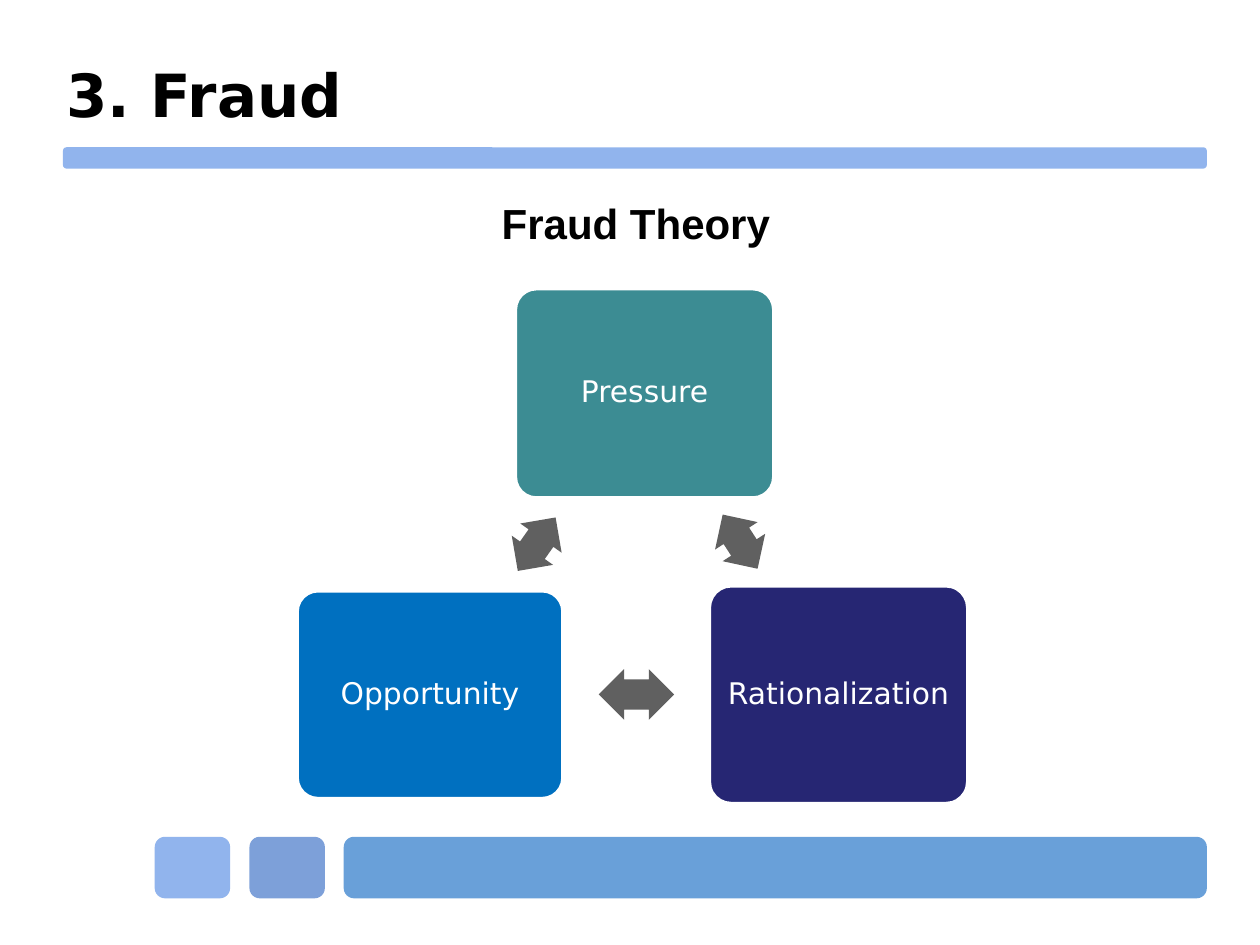
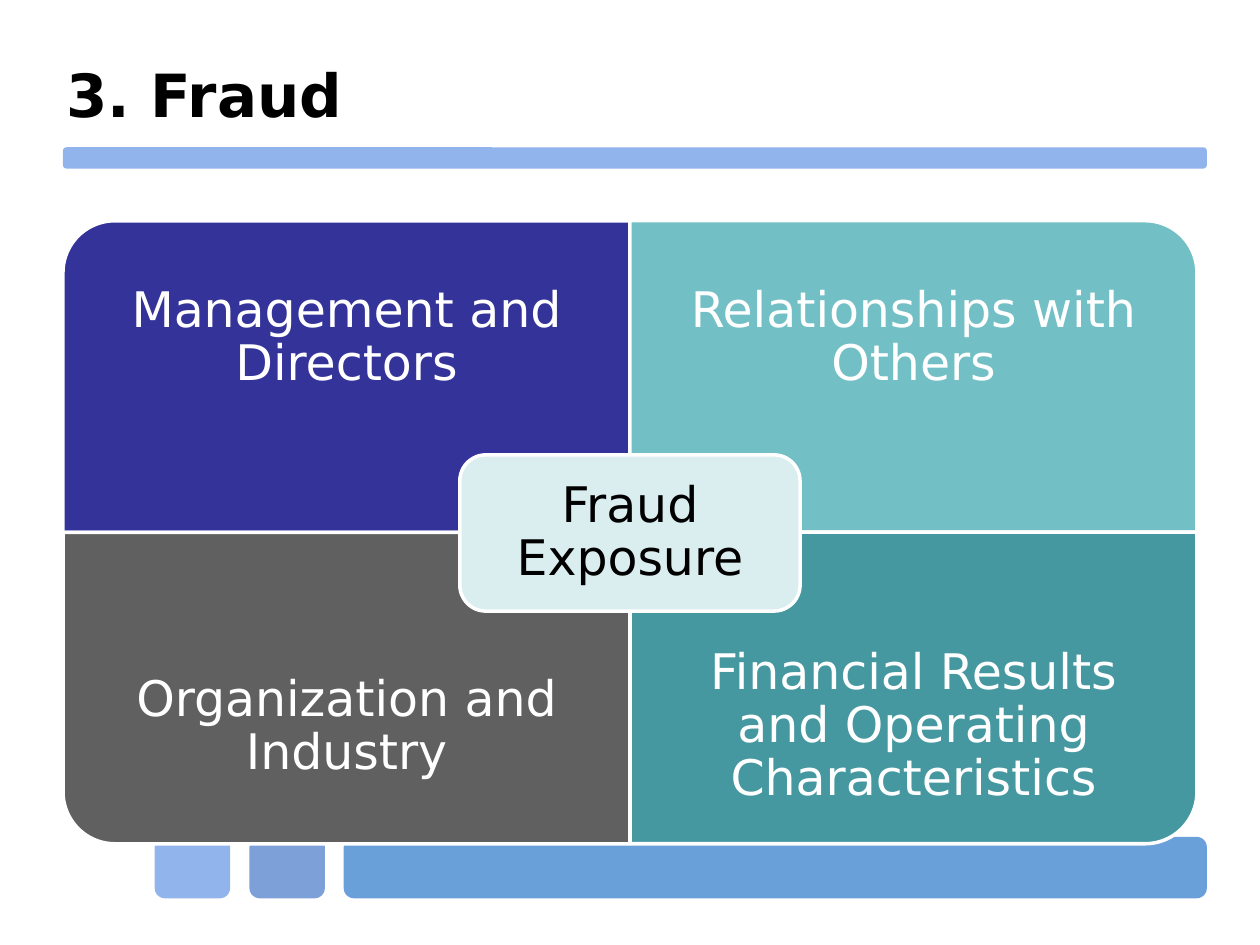
from pptx import Presentation
from pptx.dml.color import RGBColor
from pptx.enum.shapes import MSO_SHAPE
from pptx.enum.text import MSO_ANCHOR, PP_ALIGN
from pptx.util import Cm, Pt

BAND = MSO_SHAPE.FLOWCHART_ALTERNATE_PROCESS
ROUNDED = MSO_SHAPE.ROUNDED_RECTANGLE
ONE_ROUND = MSO_SHAPE.ROUND_1_RECTANGLE
DOUBLE_ARROW = MSO_SHAPE.LEFT_RIGHT_ARROW
MIDDLE = MSO_ANCHOR.MIDDLE
TOP = MSO_ANCHOR.TOP
LEFT = PP_ALIGN.LEFT
CENTER = PP_ALIGN.CENTER

WHITE = "FFFFFF"
BLACK = "000000"
SKY = "91B4ED"
GRAY = "606060"
BODY_FONT = "DejaVu Sans"
HEADING_FONT = "Arial"

FOOTER_TOP, FOOTER_HEIGHT = 16.87, 1.24
FOOTER_BLOCKS = [(3.12, 1.52, SKY), (5.03, 1.52, "7DA0D9"), (6.93, 17.4, "69A0D9")]


def color(value):
    return RGBColor.from_string(value)


class Deck:
    def __init__(self):
        self.presentation = Presentation()
        self.presentation.slide_width = Cm(25.4)
        self.presentation.slide_height = Cm(19.05)
        self.slide = None

    def add_slide(self, title):
        self.slide = self.presentation.slides.add_slide(self.presentation.slide_layouts[6])
        for left, width, fill in FOOTER_BLOCKS:
            self.shape(BAND, (left, FOOTER_TOP, width, FOOTER_HEIGHT), fill)
        self.shape(BAND, (1.27, 2.97, 23.06, 0.43), SKY)
        self.text_box((1.09, 0.3, 22.86, 3.18), title, 34, BLACK, bold=True, align=LEFT)

    def shape(self, kind, box, fill, outlined=False, rotation=0, adjustments=()):
        shape = self.slide.shapes.add_shape(kind, *map(Cm, box))
        shape.shadow.inherit = False
        shape.fill.solid()
        shape.fill.fore_color.rgb = color(fill)
        if outlined:
            shape.line.color.rgb = color(WHITE)
            shape.line.width = Pt(2)
        else:
            shape.line.fill.background()
        shape.rotation = rotation
        for index, value in enumerate(adjustments):
            shape.adjustments[index] = value
        return shape

    def set_text(self, shape, text, size, text_color, font=BODY_FONT, bold=False,
                 align=CENTER, anchor=MIDDLE, inset=0.25, spacing=1.0):
        frame = shape.text_frame
        frame.word_wrap = True
        frame.vertical_anchor = anchor
        frame.margin_left = frame.margin_right = Cm(inset)
        frame.margin_top = frame.margin_bottom = Cm(min(inset, 0.13) if anchor == TOP else inset)
        paragraph = frame.paragraphs[0]
        paragraph.alignment = align
        paragraph.line_spacing = spacing
        run = paragraph.add_run()
        run.text = text
        run.font.name = font
        run.font.size = Pt(size)
        run.font.bold = bold
        run.font.color.rgb = color(text_color)

    def text_box(self, box, text, size, text_color, **style):
        shape = self.slide.shapes.add_textbox(*map(Cm, box))
        self.set_text(shape, text, size, text_color, **style)

    def card(self, box, text, fill, size, text_color, inset, adjustments=()):
        shape = self.shape(ROUNDED, box, fill, outlined=True, adjustments=adjustments)
        self.set_text(shape, text, size, text_color, inset=inset, spacing=0.9)

    def double_arrow(self, box, rotation):
        self.shape(DOUBLE_ARROW, box, GRAY, rotation=rotation, adjustments=(0.6, 0.5))

    def quadrant(self, box, fill, rotation):
        left, top, width, height = box
        if rotation in (90, 270):
            shift = (width - height) / 2
            box = (left + shift, top - shift, height, width)
        self.shape(ONE_ROUND, box, fill, outlined=True, rotation=rotation)


def fraud_theory(deck):
    deck.add_slide("3. Fraud")
    causes = [
        ("Pressure", "3C8C93", (10.39, 5.82, 5.21, 4.22)),
        ("Rationalization", "262673", (14.3, 11.81, 5.21, 4.39)),
        ("Opportunity", "0070C0", (5.99, 11.91, 5.36, 4.19)),
    ]
    for name, fill, box in causes:
        deck.card(box, name, fill, 17, WHITE, inset=0.18, adjustments=(0.1,))
    deck.double_arrow((14.27, 10.41, 1.3, 1.02), 57.2)
    deck.double_arrow((12.07, 13.49, 1.52, 1.02), 180)
    deck.double_arrow((10.16, 10.46, 1.32, 1.02), 305.3)
    deck.text_box((8.69, 3.86, 8.26, 1.27), "Fraud Theory", 24, BLACK,
                  font=HEADING_FONT, bold=True, anchor=TOP)


def fraud_exposure(deck):
    deck.add_slide("3. Fraud")
    left, top, width, height, text_height = 1.27, 4.45, 11.43, 6.28, 4.72
    quadrants = [
        ("Management and Directors", "333399", 270),
        ("Relationships with Others", "72BFC5", 0),
        ("Organization and Industry", GRAY, 180),
        ("Financial Results and Operating Characteristics", "4597A0", 90),
    ]
    for index, (text, fill, rotation) in enumerate(quadrants):
        row, column = divmod(index, 2)
        x, y = left + column * width, top + row * height
        deck.quadrant((x, y, width, height), fill, rotation)
        text_top = y + row * (height - text_height)
        deck.text_box((x, text_top, width, text_height), text, 28, WHITE,
                      inset=0.56, spacing=0.9)
    deck.card((9.27, 9.17, 6.86, 3.15), "Fraud Exposure", "DAEDEF", 28, BLACK, inset=0.3)


def main():
    deck = Deck()
    fraud_theory(deck)
    fraud_exposure(deck)
    deck.presentation.save("out.pptx")


if __name__ == "__main__":
    main()
